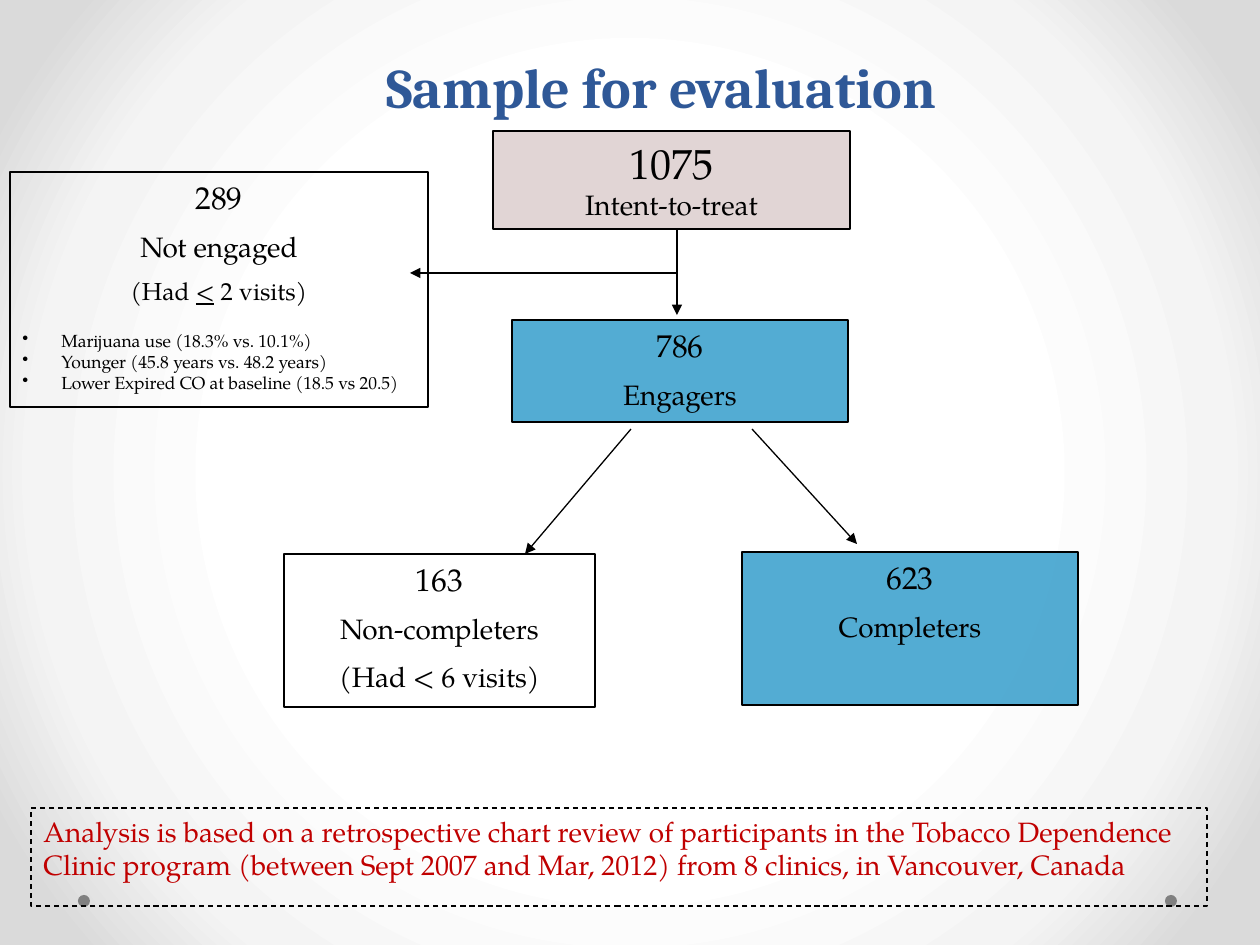
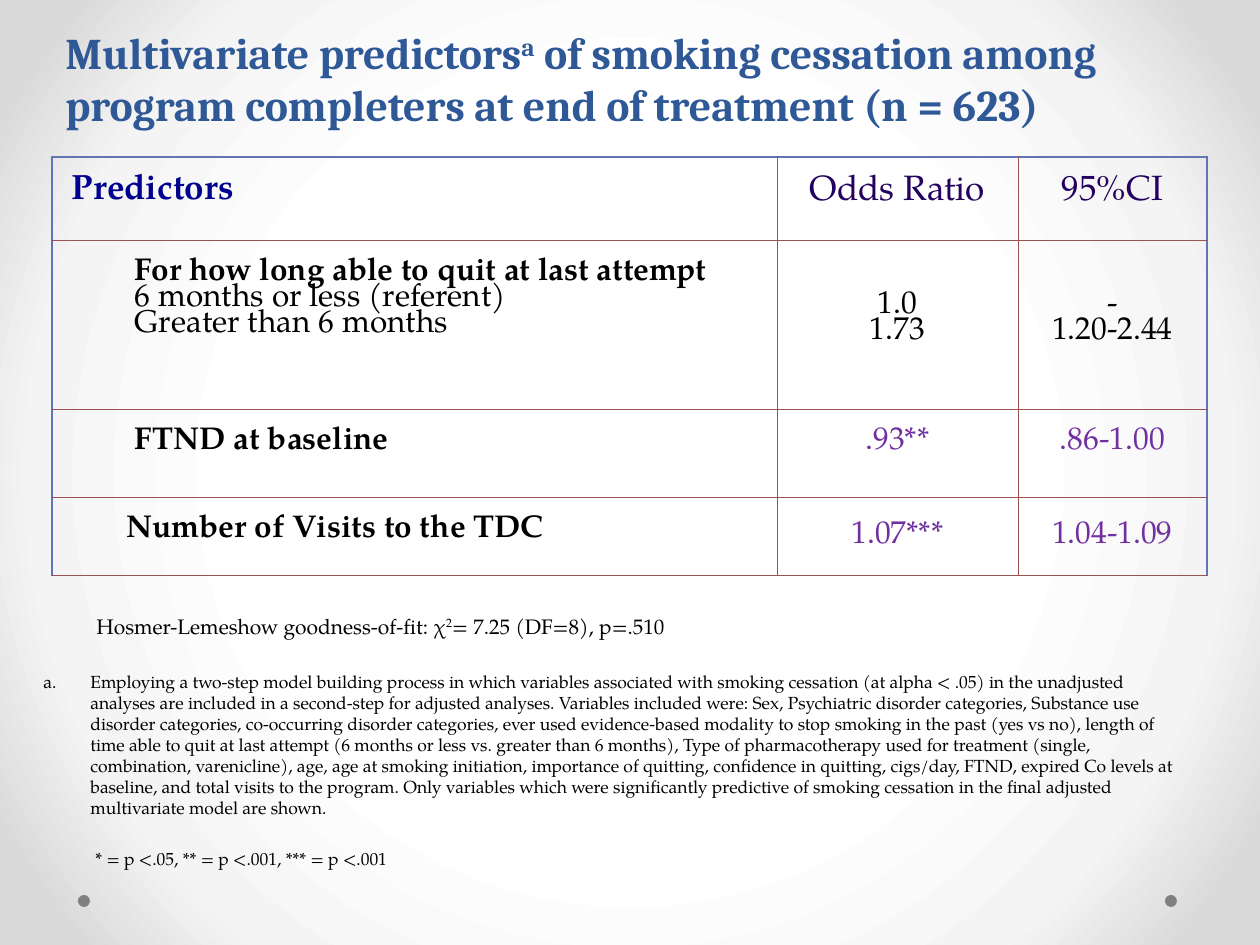
import pptx
import pptx.dml.color
import pptx.enum.dml
import pptx.enum.shapes
import pptx.enum.text
import pptx.oxml
import pptx.oxml.ns
import pptx.util
from lxml import etree

RGB = pptx.dml.color.RGBColor
BLACK = RGB(0x00, 0x00, 0x00)
GREY = RGB(0x80, 0x80, 0x80)
TITLE_BLUE = RGB(0x2F, 0x58, 0x97)
SKY = RGB(0x0E, 0x8B, 0xC2)
BROWN = RGB(0x75, 0x3D, 0x3D)
RED = RGB(0xC0, 0x00, 0x00)
NAVY = RGB(0x00, 0x00, 0x90)
INDIGO = RGB(0x25, 0x01, 0x5F)
PURPLE = RGB(0x70, 0x30, 0xA0)
EDGE_BLUE = RGB(0x60, 0x76, 0xB4)
EDGE_RED = RGB(0x9C, 0x52, 0x52)
GRADIENT = ((50, "FFFFFF"), (76, "F4F4F4"), (92, "DADADA"))

HEAD_FONT = "Cambria"
BODY_FONT = "TeX Gyre Pagella"
SHAPE = pptx.enum.shapes.MSO_SHAPE
ANCHOR = pptx.enum.text.MSO_ANCHOR
LEFT = pptx.enum.text.PP_ALIGN.LEFT
CENTER = pptx.enum.text.PP_ALIGN.CENTER
Pt = pptx.util.Pt
qn = pptx.oxml.ns.qn


def px(n):
    return pptx.util.Emu(round(n * 914400 / 126))


def child(parent, tag, **attrs):
    return etree.SubElement(parent, qn(tag), attrs)


class Deck:
    def __init__(self):
        self.prs = pptx.Presentation()
        self.prs.slide_width, self.prs.slide_height = px(1260), px(945)
        self.s = None

    def slide(self):
        """Start a blank slide with the radial backdrop and the two footer dots."""
        self.s = self.prs.slides.add_slide(self.prs.slide_layouts[6])
        stops = "".join(f'<a:gs pos="{pos * 1000}"><a:srgbClr val="{c}"/></a:gs>'
                        for pos, c in GRADIENT)
        bg = pptx.oxml.parse_xml(
            f'<p:bg {pptx.oxml.ns.nsdecls("p", "a")}><p:bgPr><a:gradFill rotWithShape="1">'
            f'<a:gsLst>{stops}</a:gsLst><a:path path="circle">'
            '<a:fillToRect l="50000" t="50000" r="50000" b="50000"/></a:path>'
            '</a:gradFill><a:effectLst/></p:bgPr></p:bg>')
        self.s.element.cSld.insert(0, bg)
        for x in (1165, 78):
            dot = self.shape(x, 895, 12, 12, SHAPE.OVAL, GREY)
            dot.line.fill.background()

    def shape(self, x, y, w, h, kind=SHAPE.RECTANGLE, fill=None, alpha=100):
        sp = self.s.shapes.add_shape(kind, px(x), px(y), px(w), px(h))
        sp.shadow.inherit = False
        sp.line.color.rgb = BLACK
        sp.line.width = Pt(0.75)
        if fill is None:
            sp.fill.background()
        else:
            sp.fill.solid()
            sp.fill.fore_color.rgb = fill
            if alpha < 100:
                color = sp.element.spPr.find(qn("a:solidFill"))[0]
                child(color, "a:alpha", val=str(alpha * 1000))
        sp.text_frame.word_wrap = True
        sp.text_frame.vertical_anchor = ANCHOR.TOP
        return sp

    def text(self, x, y, w, h, anchor=ANCHOR.TOP):
        tf = self.s.shapes.add_textbox(px(x), px(y), px(w), px(h)).text_frame
        tf.word_wrap = True
        tf.vertical_anchor = anchor
        return tf

    def para(self, tf, text, size, color=BLACK, font=BODY_FONT, bold=False,
             align=LEFT, before=0, spacing=None, indent=0, bullet=None):
        """Add a paragraph; text is a string or a list of (string, style) runs.

        A run style is "", "super" or "under"; bullet is a (tag, attributes) pair.
        """
        p = tf.paragraphs[0]
        if p.runs:
            p = tf.add_paragraph()
        p.alignment = align
        p.space_before = Pt(before)
        if spacing:
            p.line_spacing = spacing
        for words, style in [(text, "")] if isinstance(text, str) else text:
            r = p.add_run()
            r.text = words
            if style == "super":
                r._r.get_or_add_rPr().set("baseline", "30000")
            elif style == "under":
                r.font.underline = True
        for part in (p, *p.runs):
            part.font.size, part.font.name, part.font.bold = Pt(size), font, bold
            part.font.color.rgb = color
        pPr = p._p.get_or_add_pPr()
        if indent:
            pPr.set("marL", str(px(indent)))
            pPr.set("indent", str(px(-indent if bullet else 0)))
        if bullet:
            tag, attrs = bullet
            pPr.find(qn("a:defRPr")).addprevious(etree.Element(qn(tag), attrs))

    def title(self, x, y, w, h, text, size, **style):
        tf = self.text(x, y, w, h, ANCHOR.BOTTOM)
        self.para(tf, text, size, TITLE_BLUE, HEAD_FONT, True, **style)

    def box(self, x, y, w, h, lines, fill=None, alpha=71, spaced=True):
        """Flow-chart box of centred (text, size) lines, half a line apart if spaced."""
        tf = self.shape(x, y, w, h, fill=fill, alpha=alpha).text_frame
        for i, (text, size) in enumerate(lines):
            self.para(tf, text, size, align=CENTER,
                      before=size / 2 if spaced and i else 0)
        return tf

    def arrow(self, x1, y1, x2, y2):
        line = self.s.shapes.add_connector(
            pptx.enum.shapes.MSO_CONNECTOR.STRAIGHT, px(x1), px(y1), px(x2), px(y2))
        line.line.color.rgb = BLACK
        line.line.width = Pt(0.75)
        spPr = line._element.spPr
        child(spPr.find(qn("a:ln")), "a:tailEnd", type="triangle")
        child(spPr, "a:effectLst")

    def table(self, x, y, widths, heights):
        frame = self.s.shapes.add_table(len(heights), len(widths), px(x), px(y),
                                        px(sum(widths)), px(sum(heights)))
        table = frame.table
        table.first_row = table.horz_banding = False
        for col, w in zip(table.columns, widths):
            col.width = px(w)
        for row, h in zip(table.rows, heights):
            row.height = px(h)
        for i in range(len(heights)):
            for j in range(len(widths)):
                self.borders(table.cell(i, j), left=j == 0, top=i == 0,
                             right=j == len(widths) - 1)
        return table

    def borders(self, cell, left, top, right):
        """Clear the fill and draw the four edges, blue where flagged as outer."""
        cell.fill.background()
        tcPr = cell._tc.get_or_add_tcPr()
        edges = (("L", left), ("R", right), ("T", top), ("B", False))
        for i, (side, outer) in enumerate(edges):
            ln = etree.Element(qn(f"a:ln{side}"), w=str(Pt(1 if outer else 0.25)))
            fill = child(ln, "a:solidFill")
            child(fill, "a:srgbClr", val=str(EDGE_BLUE if outer else EDGE_RED))
            tcPr.insert(i, ln)

    def cell(self, cell, lines, size, color=BLACK, top=20, side=20, bottom=20,
             anchor=ANCHOR.TOP, align=CENTER, indent=0):
        """Fill a table cell with (text, bold) lines."""
        cell.margin_left = cell.margin_right = px(side)
        cell.margin_top, cell.margin_bottom = px(top), px(bottom)
        cell.vertical_anchor = anchor
        for text, bold in lines:
            self.para(cell.text_frame, text, size, color, bold=bold, align=align,
                      indent=indent, spacing=0.83)


def sample_slide(d):
    d.slide()
    d.title(63, 0, 1197, 126, "Sample for evaluation", 32, align=CENTER, spacing=Pt(58))
    d.box(493, 131, 357, 98, [("1075", 24), ("Intent-to-treat", 16)],
          BROWN, 21, spaced=False)
    d.arrow(677, 229, 677, 315)
    d.arrow(677, 273, 410, 273)

    visits = [("(Had ", ""), ("<", "under"), (" 2 visits)", "")]
    not_engaged = d.box(10, 172, 418, 235,
                        [("289", 18), ("Not engaged", 16), (visits, 14)])
    traits = ("Marijuana use (18.3% vs. 10.1%)",
              "Younger (45.8 years vs. 48.2 years)",
              "Lower Expired CO at baseline (18.5 vs 20.5)")
    for i, trait in enumerate(traits):
        d.para(not_engaged, trait, 10, before=0 if i else 14, indent=39,
               bullet=("a:buChar", {"char": "•"}))

    d.box(512, 320, 336, 102, [("786", 18), ("Engagers", 16)], SKY)
    note = d.shape(31, 808, 1176, 98)
    note.line.dash_style = pptx.enum.dml.MSO_LINE.DASH
    d.para(note.text_frame,
           "Analysis is based on a retrospective chart review of participants in the "
           "Tobacco Dependence Clinic program (between Sept 2007 and Mar, 2012) from "
           "8 clinics, in Vancouver, Canada", 16, RED)
    d.arrow(631, 429, 525, 554)
    d.arrow(752, 429, 857, 544)
    d.box(284, 554, 311, 153,
          [("163", 18), ("Non-completers", 16), ("(Had < 6 visits)", 16)])
    d.box(742, 552, 336, 153, [("623", 18), ("Completers", 16)], SKY)


def predictors_slide(d):
    d.slide()
    d.title(53, 21, 1197, 116,
            [("Multivariate predictors", ""), ("a", "super"),
             (" of smoking cessation among program completers at end of treatment "
              "(n = 623)", "")], 25)

    method = ("Employing a two-step model building process in which variables associated "
              "with smoking cessation (at alpha < .05) in the unadjusted analyses are "
              "included in a second-step for adjusted analyses. ")
    variables = ("Variables included were: Sex, Psychiatric disorder categories, "
                 "Substance use disorder categories, co-occurring disorder categories, "
                 "ever used evidence-based modality to stop smoking in the past (yes vs "
                 "no), length of time able to quit at last attempt (6 months or less vs. "
                 "greater than 6 months), Type of pharmacotherapy used for treatment "
                 "(single, combination, varenicline), age, age at smoking initiation, "
                 "importance of quitting, confidence in quitting, cigs/day, FTND, "
                 "expired Co levels at baseline, and total visits to the program. ")
    shown = ("Only variables which were significantly predictive of smoking cessation "
             "in the final adjusted multivariate model are shown.")
    notes = d.text(31, 662, 1156, 216, ANCHOR.MIDDLE)
    d.para(notes, [(sentence, "") for sentence in (method, variables, shown)],
           10, indent=47, bullet=("a:buAutoNum", {"type": "alphaLcPeriod"}))
    d.para(notes, "* = p <.05, ** = p <.001, *** = p <.001", 10, before=17, indent=52)

    table = d.table(52, 157, (725, 241, 189), (83, 169, 88, 78))
    d.cell(table.cell(0, 0), [("Predictors", True)], 20, NAVY, align=LEFT)
    for j, heading in enumerate(("Odds Ratio", "95%CI"), 1):
        d.cell(table.cell(0, j), [(heading, False)], 20, INDIGO)

    quit_lines = [("For how long able to quit at last attempt", True),
                  ("6 months or less (referent)", False),
                  ("Greater than 6 months", False)]
    predictors = ((quit_lines, 63),
                  ([("FTND at baseline", True)], 63),
                  ([("Number of Visits to the TDC", True)], 55))
    for i, (lines, indent) in enumerate(predictors, 1):
        d.cell(table.cell(i, 0), lines, 18, align=LEFT, indent=indent)

    one_line_down = {"top": 52}
    middle = {"color": PURPLE, "top": 0, "side": 9, "bottom": 0, "anchor": ANCHOR.MIDDLE}
    results = (((("1.0", "1.73"), ("-", "1.20-2.44")), one_line_down),
               (((".93**",), (".86-1.00",)), {"color": PURPLE}),
               ((("1.07***",), ("1.04-1.09",)), middle))
    for i, (columns, style) in enumerate(results, 1):
        for j, values in enumerate(columns, 1):
            d.cell(table.cell(i, j), [(v, False) for v in values], 18, **style)

    d.para(d.text(84, 607, 966, 38),
           [("Hosmer-Lemeshow goodness-of-fit: χ", ""), ("2", "super"),
            ("= 7.25 (DF=8), p=.510", "")], 12)


def main():
    d = Deck()
    sample_slide(d)
    predictors_slide(d)
    d.prs.save("out.pptx")


if __name__ == "__main__":
    main()
